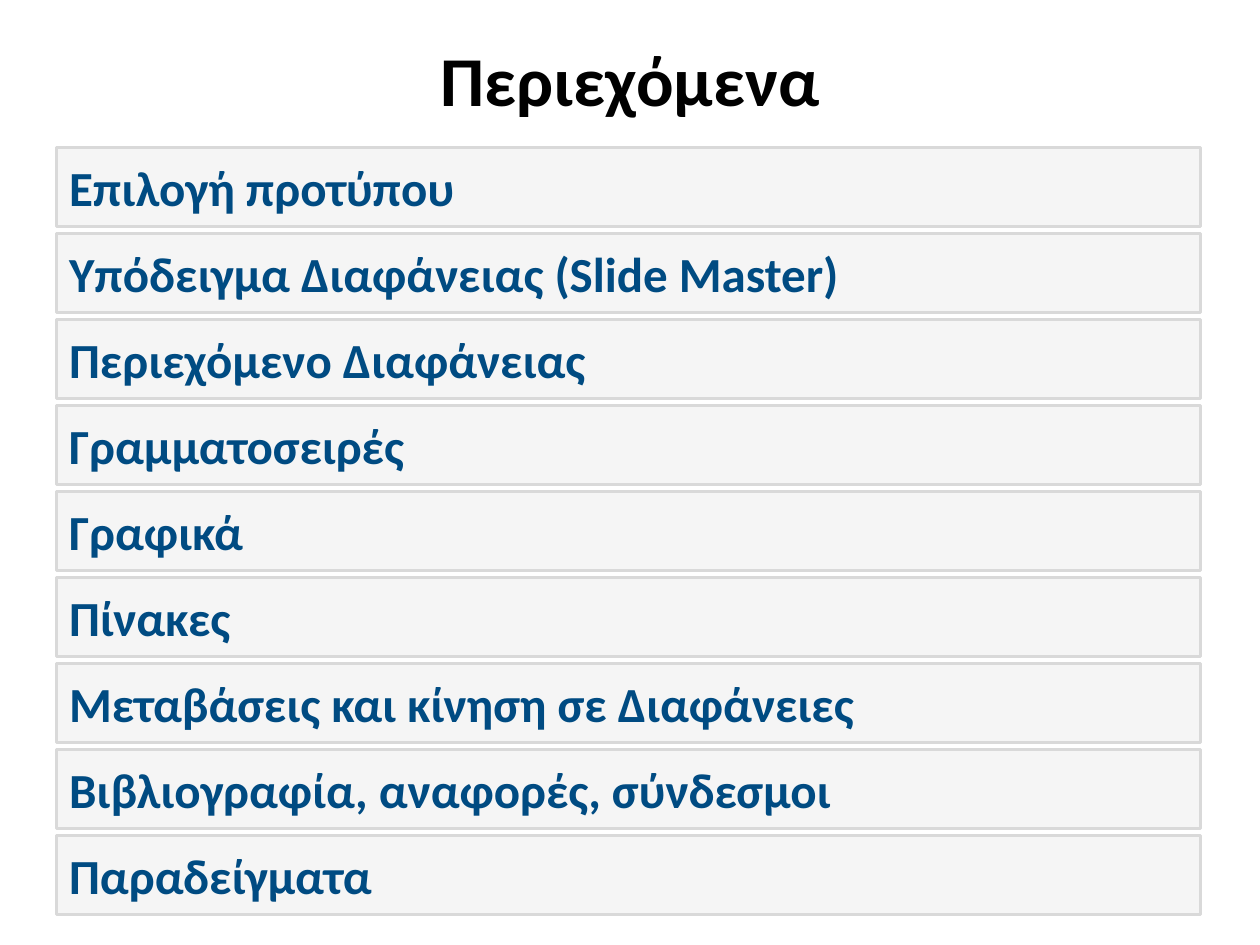
import pptx
import pptx.dml.color
import pptx.enum.shapes
import pptx.enum.text
import pptx.util

Inches = pptx.util.Inches
Pt = pptx.util.Pt
Color = pptx.dml.color.RGBColor
Align = pptx.enum.text.PP_ALIGN

BLACK = Color(0x00, 0x00, 0x00)
BLUE = Color(0x00, 0x4B, 0x82)
PALE = Color(0xF5, 0xF5, 0xF5)
GREY = Color(0xD9, 0xD9, 0xD9)

TOPICS = [
    "Επιλογή προτύπου",
    "Υπόδειγμα Διαφάνειας (Slide Master)",
    "Περιεχόμενο Διαφάνειας",
    "Γραμματοσειρές",
    "Γραφικά",
    "Πίνακες",
    "Μεταβάσεις και κίνηση σε Διαφάνειες",
    "Βιβλιογραφία, αναφορές, σύνδεσμοι",
    "Παραδείγματα",
]

# Grid of equal rows, in inches
LEFT, WIDTH = 0.45, 9.08
FIRST, LAST, HEIGHT = 1.17, 6.63, 0.63
STEP = (LAST - FIRST) / (len(TOPICS) - 1)


def write(shape, text, size, color, align):
    frame = shape.text_frame
    frame.word_wrap = True
    frame.vertical_anchor = pptx.enum.text.MSO_ANCHOR.MIDDLE
    line = frame.paragraphs[0]
    line.text = text
    line.alignment = align
    line.font.name = "Calibri"
    line.font.size = Pt(size)
    line.font.bold = True
    line.font.color.rgb = color


deck = pptx.Presentation()
deck.slide_width = Inches(10)
deck.slide_height = Inches(7.5)
slide = deck.slides.add_slide(deck.slide_layouts[6])

title = slide.shapes.add_textbox(Inches(0.5), Inches(0.25), Inches(9), Inches(0.75))
write(title, "Περιεχόμενα", 40, BLACK, Align.CENTER)

for row, topic in enumerate(TOPICS):
    bar = slide.shapes.add_shape(
        pptx.enum.shapes.MSO_SHAPE.RECTANGLE,
        Inches(LEFT), Inches(FIRST + row * STEP), Inches(WIDTH), Inches(HEIGHT))
    bar.shadow.inherit = False
    bar.fill.solid()
    bar.fill.fore_color.rgb = PALE
    bar.line.color.rgb = GREY
    bar.line.width = Pt(2)
    write(bar, topic, 28, BLUE, Align.LEFT)

deck.save("out.pptx")
